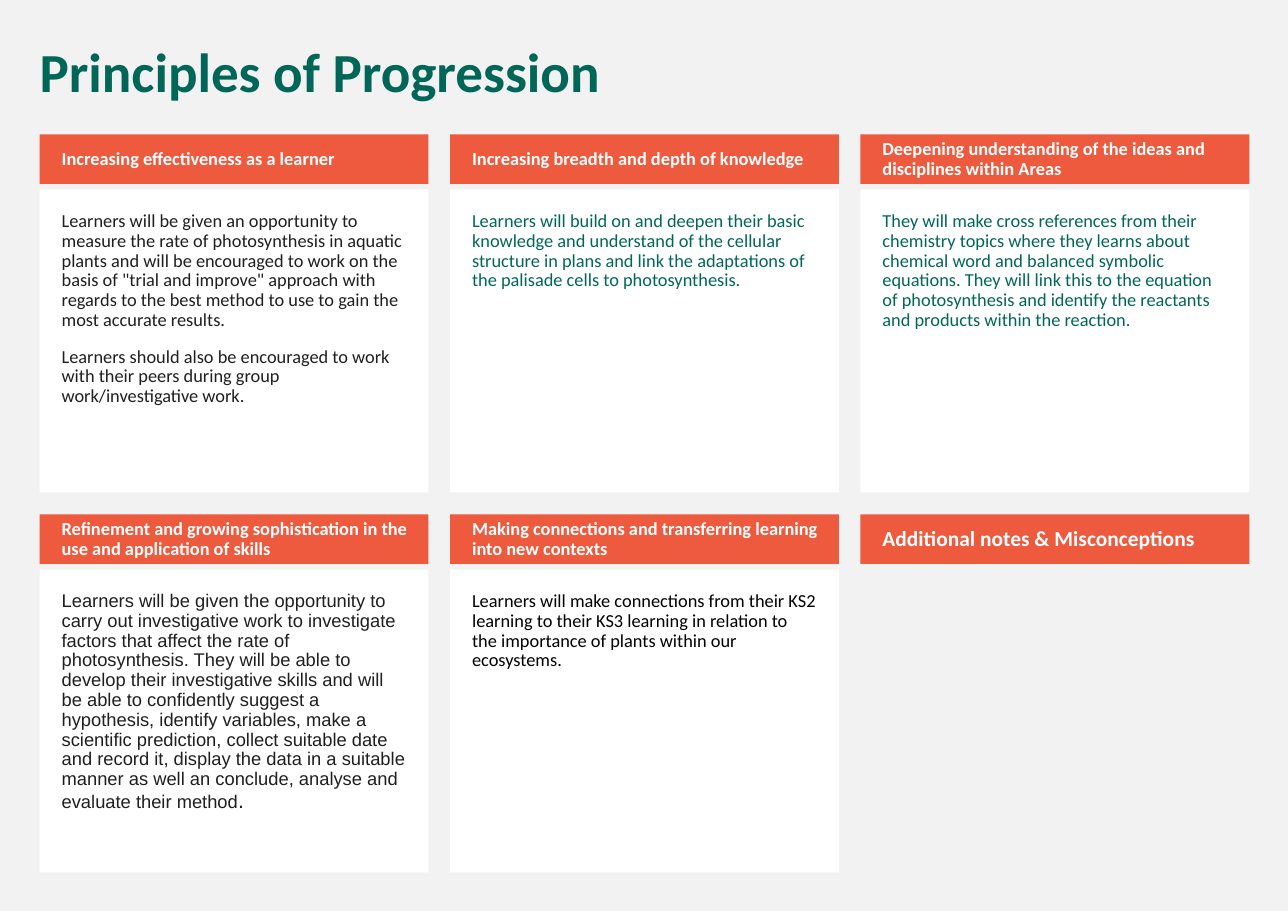
from pptx import Presentation
from pptx.dml.color import RGBColor
from pptx.enum.shapes import MSO_SHAPE
from pptx.enum.text import MSO_ANCHOR, MSO_AUTO_SIZE, PP_ALIGN
from pptx.util import Inches, Pt

COLOURS = {"page": "F2F2F2", "header": "ED5A3E", "card": "FFFFFF", "white": "FFFFFF",
           "green": "006758", "ink": "1F1F1F", "black": "000000"}

TITLE = "Principles of Progression"

# One row per line of cards: heading, heading size, body font, body colour, paragraphs.
# A paragraph is a list of (text, size) runs.
PRINCIPLES = [
    [
        ("Increasing effectiveness as a learner", 12, "Calibri", "ink", [
            [("Learners will be given an opportunity to measure the rate of photosynthesis in "
              "aquatic plants and will be encouraged to work on the basis of \"trial and improve\" "
              "approach with regards to the best method to use to gain the most accurate "
              "results. ", 12)],
            [("Learners should also be encouraged to work with their peers during group "
              "work/investigative work. ", 12)],
        ]),
        ("Increasing breadth and depth of knowledge", 12, "Calibri", "green", [
            [("Learners will build on and deepen their basic knowledge and understand of the "
              "cellular structure in plans and link the adaptations of the palisade cells "
              "to photosynthesis.", 12)],
        ]),
        ("Deepening understanding of the ideas and disciplines within Areas", 12, "Calibri", "green", [
            [("They will make cross references from their chemistry topics where they learns about "
              "chemical word and balanced symbolic equations. They will link this to the equation "
              "of photosynthesis and identify the reactants and products within "
              "the reaction. ", 12)],
        ]),
    ],
    [
        ("Refinement and growing sophistication in the use and application of skills", 12, "Arial", "ink", [
            [("Learners will be given the opportunity to carry out investigative work to "
              "investigate factors that affect the rate of photosynthesis. They will be able to "
              "develop their investigative skills and will be able to confidently suggest a "
              "hypothesis, identify variables, make a scientific prediction, collect suitable date "
              "and record it, display the data in a suitable manner as well an conclude, analyse "
              "and evaluate their method", 12), (". ", 14)],
        ]),
        ("Making connections and transferring learning into new contexts", 12, "Calibri", "black", [
            [("Learners will make connections from their KS2 learning to their KS3 learning in "
              "relation to the importance of plants within our ecosystems. ", 12)],
        ]),
        ("Additional notes & Misconceptions", 14, "Calibri", "white", []),
    ],
]

SLIDE_W, SLIDE_H = 11.69, 8.27
LEFT, RIGHT, TOP = 0.36, 11.34, 1.22
CARD_W, CARD_H, HEADER_H = 3.53, 2.75, 0.45
CARD_DROP = 0.5
COLUMN_STEP = (RIGHT - LEFT - CARD_W) / 2
ROW_STEP = 3.45

HEADER_FRAME = {"margin_left": Inches(0.2), "margin_top": Inches(0.05),
                "margin_right": Inches(0.1), "margin_bottom": Inches(0.05),
                "vertical_anchor": MSO_ANCHOR.MIDDLE}
CARD_FRAME = {f"margin_{side}": Inches(0.2) for side in ("left", "top", "right", "bottom")}
CARD_FRAME["vertical_anchor"] = MSO_ANCHOR.TOP
TITLE_FRAME = {"vertical_anchor": MSO_ANCHOR.TOP}
PARAGRAPH = {"line_spacing": 0.9, "space_before": Pt(11), "alignment": PP_ALIGN.LEFT}


def apply(target, values):
    for name, value in values.items():
        setattr(target, name, value)


def rgb(name):
    return RGBColor.from_string(COLOURS[name])


def write(shape, paragraphs, frame_format, font, colour, bold=False):
    frame = shape.text_frame
    apply(frame, {"word_wrap": True, "auto_size": MSO_AUTO_SIZE.NONE, **frame_format})
    for index, runs in enumerate(paragraphs):
        paragraph = frame.add_paragraph() if index else frame.paragraphs[0]
        apply(paragraph, PARAGRAPH)
        for text, size in runs:
            run = paragraph.add_run()
            run.text = text
            apply(run.font, {"name": font, "size": Pt(size), "bold": bold})
            run.font.color.rgb = rgb(colour)


def add_panel(slide, left, top, height, fill):
    panel = slide.shapes.add_shape(MSO_SHAPE.RECTANGLE, Inches(left), Inches(top),
                                   Inches(CARD_W), Inches(height))
    panel.shadow.inherit = False
    panel.fill.solid()
    panel.fill.fore_color.rgb = rgb(fill)
    panel.line.fill.background()
    return panel


def main():
    deck = Presentation()
    apply(deck, {"slide_width": Inches(SLIDE_W), "slide_height": Inches(SLIDE_H)})
    slide = deck.slides.add_slide(deck.slide_layouts[5])
    slide.background.fill.solid()
    slide.background.fill.fore_color.rgb = rgb("page")

    title = slide.shapes.title
    apply(title, {"left": Inches(0.26), "top": Inches(0.36),
                  "width": Inches(RIGHT - 0.26), "height": Inches(0.65)})
    write(title, [[(TITLE, 36)]], TITLE_FRAME, "Calibri", "green", bold=True)

    for row, principles in enumerate(PRINCIPLES):
        for column, (heading, size, font, colour, body) in enumerate(principles):
            left, top = LEFT + column * COLUMN_STEP, TOP + row * ROW_STEP
            if body:
                card = add_panel(slide, left, top + CARD_DROP, CARD_H, "card")
                write(card, body, CARD_FRAME, font, colour)
            header = add_panel(slide, left, top, HEADER_H, "header")
            write(header, [[(heading, size)]], HEADER_FRAME, "Calibri", "white", bold=True)

    deck.save("out.pptx")


if __name__ == "__main__":
    main()
